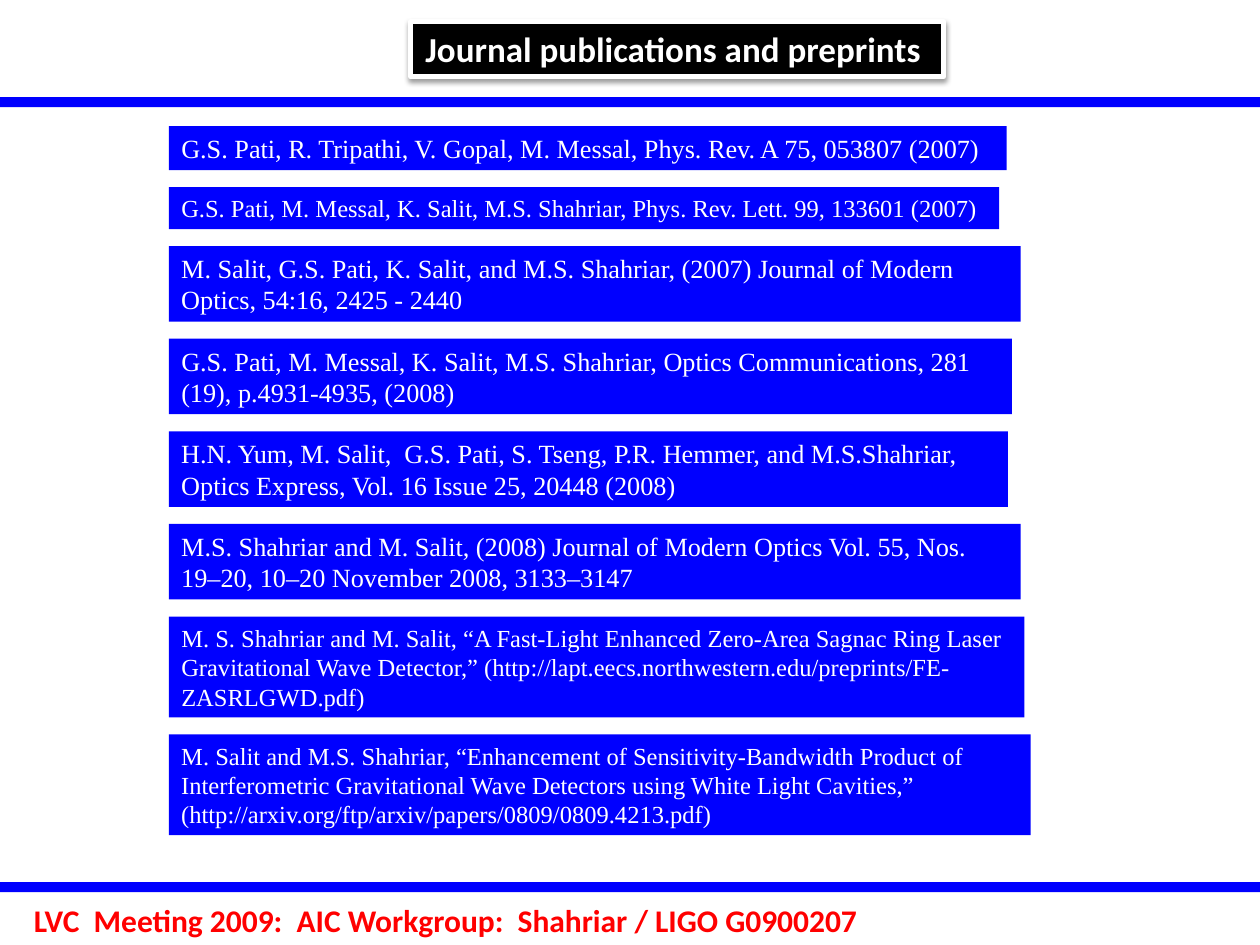
from lxml import etree
from pptx import Presentation
from pptx.dml.color import RGBColor
from pptx.enum.shapes import MSO_SHAPE
from pptx.enum.text import MSO_ANCHOR, PP_ALIGN
from pptx.oxml.ns import qn
from pptx.util import Inches, Pt

RECTANGLE = MSO_SHAPE.RECTANGLE
TOP, MIDDLE = MSO_ANCHOR.TOP, MSO_ANCHOR.MIDDLE
LEFT, CENTER = PP_ALIGN.LEFT, PP_ALIGN.CENTER

# Content: text, type size, line count, box width
TITLE = "Journal publications and preprints "
FOOTER = "LVC  Meeting 2009:  AIC Workgroup:  Shahriar / LIGO G0900207"
PUBLICATIONS = [
    ("G.S. Pati, R. Tripathi, V. Gopal, M. Messal, Phys. Rev. A 75, 053807 (2007)",
     "large", 1, 6.65),
    ("G.S. Pati, M. Messal, K. Salit, M.S. Shahriar, Phys. Rev. Lett. 99, 133601 (2007)",
     "small", 1, 6.59),
    ("M. Salit, G.S. Pati, K. Salit, and M.S. Shahriar, (2007) Journal of Modern "
     "Optics, 54:16, 2425 - 2440", "large", 2, 6.76),
    ("G.S. Pati, M. Messal, K. Salit, M.S. Shahriar, Optics Communications, 281 "
     "(19), p.4931-4935, (2008)", "large", 2, 6.69),
    ("H.N. Yum, M. Salit,  G.S. Pati, S. Tseng, P.R. Hemmer, and M.S.Shahriar, "
     "Optics Express, Vol. 16 Issue 25, 20448 (2008)", "large", 2, 6.66),
    ("M.S. Shahriar and M. Salit, (2008) Journal of Modern Optics Vol. 55, Nos. "
     "19–20, 10–20 November 2008, 3133–3147", "large", 2, 6.76),
    ("M. S. Shahriar and M. Salit, “A Fast-Light Enhanced Zero-Area Sagnac Ring Laser "
     "Gravitational Wave Detector,” (http://lapt.eecs.northwestern.edu/preprints/"
     "FE-ZASRLGWD.pdf)", "small", 3, 6.79),
    ("M. Salit and M.S. Shahriar, “Enhancement of Sensitivity-Bandwidth Product of "
     "Interferometric Gravitational Wave Detectors using White Light Cavities,” "
     "(http://arxiv.org/ftp/arxiv/papers/0809/0809.4213.pdf)", "small", 3, 6.84),
]

THEME = {
    "blue": "0000FF", "white": "FFFFFF", "black": "000000", "red": "FF0000",
    "heading": "Calibri", "body": "Times New Roman",
    "title": 20, "footer": 18, "large": 15, "small": 14,
}

# Layout in inches
WIDTH, HEIGHT = 10, 7.5
RULE_TOPS, RULE_HEIGHT = (0.77, 7), 0.08
LIST_LEFT, LIST_TOP, LIST_GAP = 1.34, 1, 0.135
LEADING, PADDING = 1.2, 0.05


def color(name):
    return RGBColor.from_string(THEME[name])


def add_box(page, left, top, width, height, fill):
    box = page.shapes.add_shape(RECTANGLE, Inches(left), Inches(top),
                                Inches(width), Inches(height))
    box.shadow.inherit = False
    box.fill.solid()
    box.fill.fore_color.rgb = color(fill)
    box.line.fill.background()
    return box


def write(box, text, font, size, ink="white", bold=False, align=LEFT,
          anchor=MIDDLE, wrap=False):
    frame = box.text_frame
    frame.text = text
    frame.word_wrap = wrap
    frame.vertical_anchor = anchor
    para = frame.paragraphs[0]
    para.alignment = align
    para.font.name = THEME[font]
    para.font.size = Pt(THEME[size])
    para.font.bold = bold
    para.font.color.rgb = color(ink)
    return para


def add_soft_shadow(box):
    effects = box._element.spPr.find(qn("a:effectLst"))
    shadow = etree.SubElement(effects, qn("a:outerShdw"), blurRad=str(Pt(3.1)),
                              dist=str(Pt(1.6)), dir="5400000", rotWithShape="0")
    tint = etree.SubElement(shadow, qn("a:srgbClr"), val=THEME["black"])
    etree.SubElement(tint, qn("a:alpha"), val="38000")


def main():
    deck = Presentation()
    deck.slide_width, deck.slide_height = Inches(WIDTH), Inches(HEIGHT)
    page = deck.slides.add_slide(deck.slide_layouts[6])

    # Rules and footer
    for top in RULE_TOPS:
        add_box(page, 0, top, WIDTH, RULE_HEIGHT, "blue")
    footer = page.shapes.add_textbox(Inches(0.17), Inches(7.1), Inches(6.81), Inches(0.4))
    write(footer, FOOTER, "heading", "footer", ink="red", bold=True, anchor=TOP)

    # Publications, stacked with equal gaps
    top = LIST_TOP
    for text, size, lines, width in PUBLICATIONS:
        leading = LEADING * THEME[size]
        height = lines * leading / 72 + 2 * PADDING
        box = add_box(page, LIST_LEFT, top, width, height, "blue")
        para = write(box, text, "body", size, anchor=TOP, wrap=lines > 1)
        para.line_spacing = Pt(leading)
        top += height + LIST_GAP

    # Title
    title = add_box(page, 3.26, 0.17, 4.23, 0.44, "black")
    title.line.color.rgb = color("white")
    title.line.width = Pt(3)
    add_soft_shadow(title)
    write(title, TITLE, "heading", "title", bold=True, align=CENTER, anchor=TOP)

    deck.save("out.pptx")


if __name__ == "__main__":
    main()
